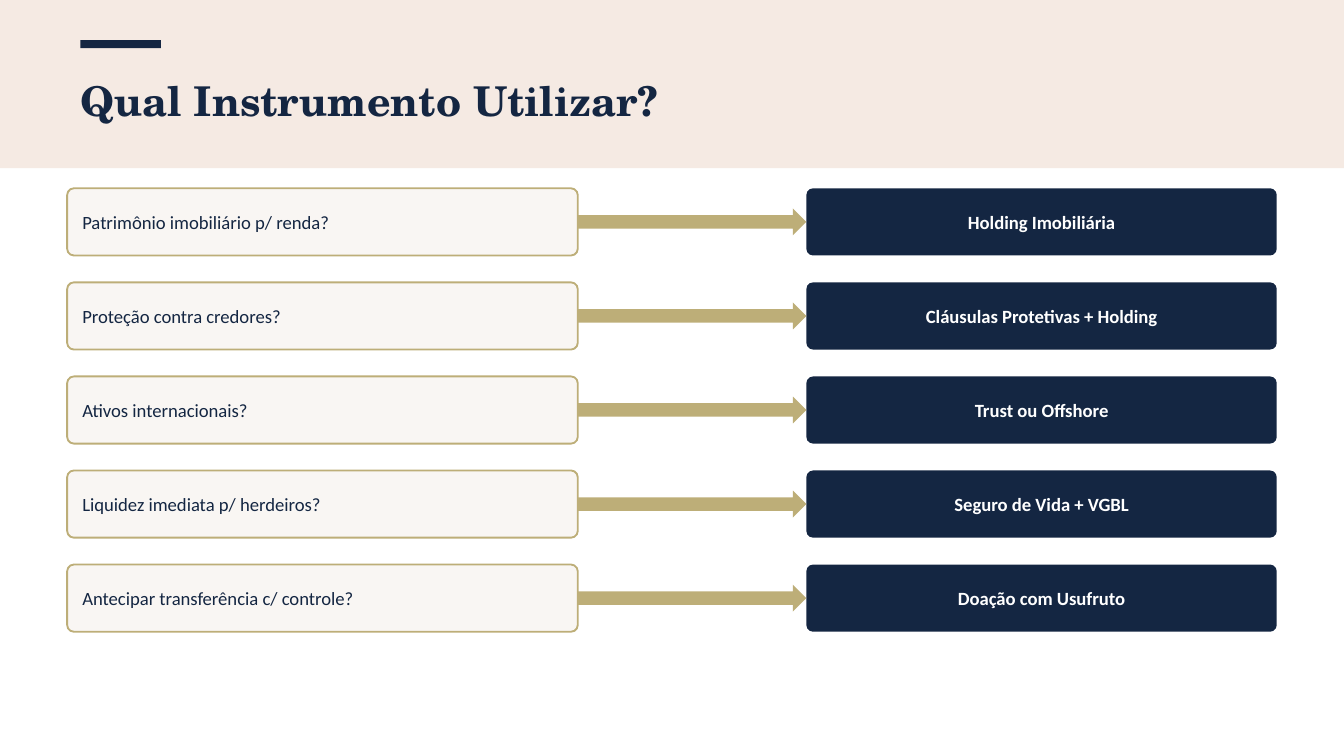
from dataclasses import dataclass
from typing import Optional

from pptx import Presentation
from pptx.dml.color import RGBColor
from pptx.enum.shapes import MSO_SHAPE
from pptx.enum.text import MSO_ANCHOR, PP_ALIGN
from pptx.shapes.autoshape import Shape
from pptx.slide import Slide
from pptx.util import Cm, Pt

COLORS = {
    "navy": "142642",
    "gold": "BDAE78",
    "blush": "F5EAE3",
    "cream": "F9F6F3",
    "white": "FFFFFF",
}

# Layout in centimetres
MARGIN = 1.52
FIRST_ROW_TOP, ROW_PITCH, ROW_HEIGHT = 3.56, 1.778, 1.27
QUESTION_LEFT, QUESTION_WIDTH = 1.27, 9.65
ANSWER_LEFT, ANSWER_WIDTH = 15.24, 8.89
ARROW_LEFT = QUESTION_LEFT + QUESTION_WIDTH
ARROW_HEIGHT = 0.51


@dataclass(frozen=True)
class Box:
    left: float
    top: float
    width: float
    height: float


@dataclass(frozen=True)
class TextStyle:
    font: str
    size: float
    color: str
    bold: bool = False
    align: PP_ALIGN = PP_ALIGN.LEFT
    side_inset: float = 0


@dataclass(frozen=True)
class Choice:
    question: str
    answer: str


TITLE_STYLE = TextStyle("TeX Gyre Schola", 22, "navy", bold=True)
QUESTION_STYLE = TextStyle("Calibri", 10, "navy", side_inset=0.25)
ANSWER_STYLE = TextStyle("Calibri", 10, "white", True, PP_ALIGN.CENTER, 0.25)

CHOICES = [
    Choice("Patrimônio imobiliário p/ renda?", "Holding Imobiliária"),
    Choice("Proteção contra credores?", "Cláusulas Protetivas + Holding"),
    Choice("Ativos internacionais?", "Trust ou Offshore"),
    Choice("Liquidez imediata p/ herdeiros?", "Seguro de Vida + VGBL"),
    Choice("Antecipar transferência c/ controle?", "Doação com Usufruto"),
]


def rgb(name: str) -> RGBColor:
    return RGBColor.from_string(COLORS[name])


def place(box: Box) -> tuple:
    return Cm(box.left), Cm(box.top), Cm(box.width), Cm(box.height)


def draw_shape(slide: Slide, kind: MSO_SHAPE, box: Box, fill: str,
               outline: Optional[str] = None) -> Shape:
    shape = slide.shapes.add_shape(kind, *place(box))
    shape.shadow.inherit = False
    shape.fill.solid()
    shape.fill.fore_color.rgb = rgb(fill)
    if outline:
        shape.line.color.rgb = rgb(outline)
        shape.line.width = Pt(1)
    else:
        shape.line.fill.background()
    return shape


def write(shape: Shape, text: str, style: TextStyle) -> None:
    frame = shape.text_frame
    frame.text = text
    frame.word_wrap = True
    frame.vertical_anchor = MSO_ANCHOR.MIDDLE
    frame.margin_left = frame.margin_right = Cm(style.side_inset)
    frame.margin_top = frame.margin_bottom = 0
    paragraph = frame.paragraphs[0]
    paragraph.alignment = style.align
    font = paragraph.runs[0].font
    font.name = style.font
    font.size = Pt(style.size)
    font.bold = style.bold
    font.color.rgb = rgb(style.color)


def draw_card(slide: Slide, box: Box, text: str, style: TextStyle, fill: str,
              outline: Optional[str] = None) -> None:
    card = draw_shape(slide, MSO_SHAPE.ROUNDED_RECTANGLE, box, fill, outline)
    card.adjustments[0] = 0.1
    write(card, text, style)


def draw_choice(slide: Slide, choice: Choice, top: float) -> None:
    draw_card(slide, Box(QUESTION_LEFT, top, QUESTION_WIDTH, ROW_HEIGHT),
              choice.question, QUESTION_STYLE, "cream", "gold")
    draw_card(slide, Box(ANSWER_LEFT, top, ANSWER_WIDTH, ROW_HEIGHT),
              choice.answer, ANSWER_STYLE, "navy")
    arrow_top = top + (ROW_HEIGHT - ARROW_HEIGHT) / 2
    draw_shape(slide, MSO_SHAPE.RIGHT_ARROW,
               Box(ARROW_LEFT, arrow_top, ANSWER_LEFT - ARROW_LEFT, ARROW_HEIGHT),
               "gold")


def main() -> None:
    deck = Presentation()
    deck.slide_width, deck.slide_height = Cm(25.4), Cm(14.29)
    slide = deck.slides.add_slide(deck.slide_layouts[6])

    # Header band, accent bar and title
    draw_shape(slide, MSO_SHAPE.RECTANGLE, Box(0, 0, 25.4, 3.18), "blush")
    draw_shape(slide, MSO_SHAPE.RECTANGLE, Box(MARGIN, 0.76, MARGIN, 0.15), "navy")
    title = slide.shapes.add_textbox(*place(Box(MARGIN, 1.07, 22.35, 1.65)))
    write(title, "Qual Instrumento Utilizar?", TITLE_STYLE)

    # One row per need: question, arrow, instrument
    for row, choice in enumerate(CHOICES):
        draw_choice(slide, choice, FIRST_ROW_TOP + row * ROW_PITCH)

    deck.save("out.pptx")


if __name__ == "__main__":
    main()
